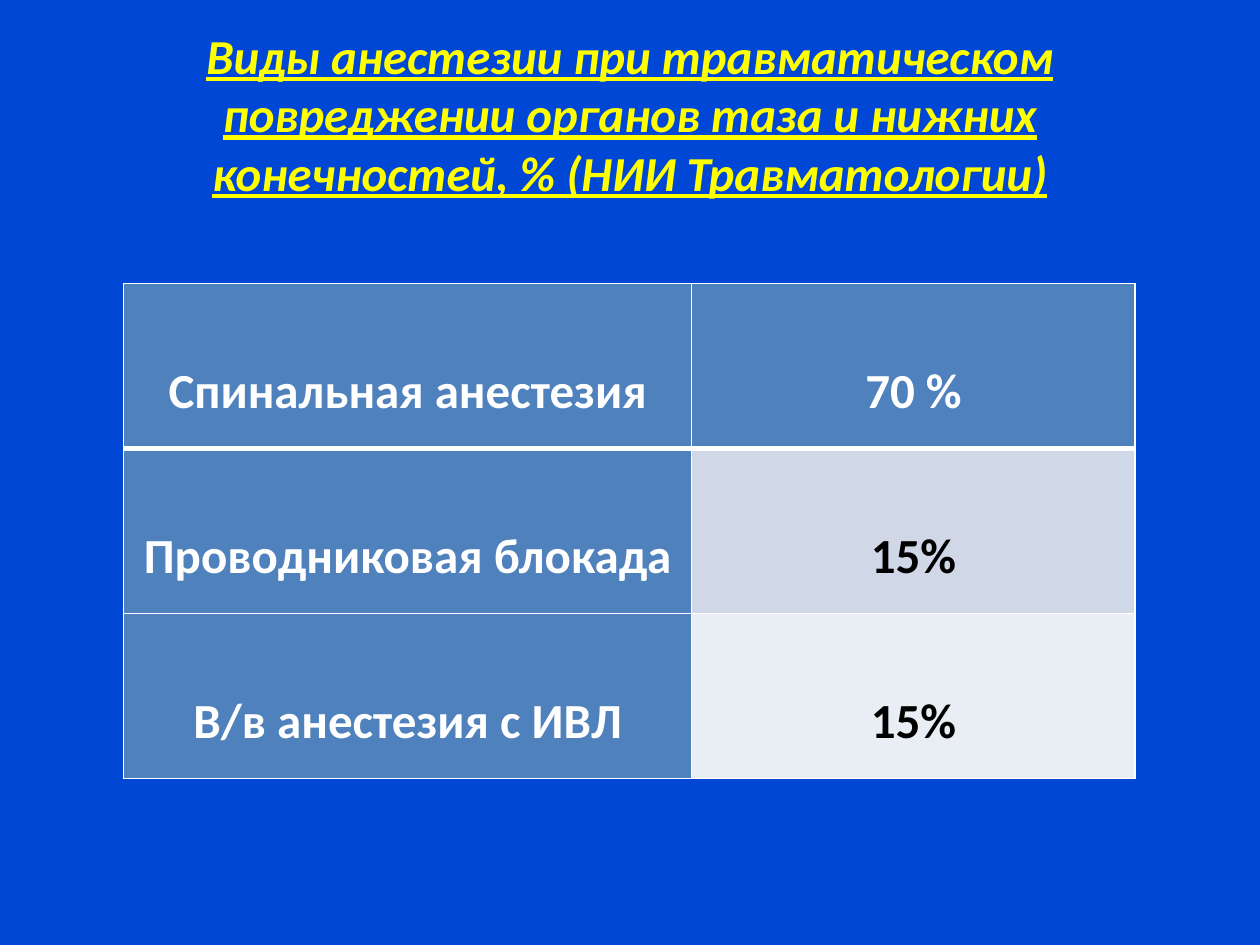
from lxml.etree import SubElement
from pptx import Presentation
from pptx.dml.color import RGBColor
from pptx.enum.text import MSO_ANCHOR, PP_ALIGN
from pptx.oxml.ns import qn
from pptx.util import Inches, Pt

COLORS = {
    "background": "0047D6", "title": "FFFF00", "header": "4F81BD",
    "band_dark": "D0D8E8", "band_light": "E9EDF4",
    "white": "FFFFFF", "black": "000000",
}
ROWS = [
    ("Спинальная анестезия", "70 %", "header", "white"),
    ("Проводниковая блокада", "15%", "band_dark", "black"),
    ("В/в анестезия с ИВЛ", "15%", "band_light", "black"),
]
COLUMN_WIDTHS = [4.51, 3.52]
ROW_HEIGHT = 1.31


def rgb(name):
    return RGBColor.from_string(COLORS[name])


def add_border(cell, side, width):
    line = SubElement(cell._tc.get_or_add_tcPr(), qn(f"a:ln{side}"), w=str(Pt(width)))
    fill = SubElement(line, qn("a:solidFill"))
    SubElement(fill, qn("a:srgbClr"), val=COLORS["white"])


presentation = Presentation()
presentation.slide_width, presentation.slide_height = Inches(10), Inches(7.5)
slide = presentation.slides.add_slide(presentation.slide_layouts[5])
slide.background.fill.solid()
slide.background.fill.fore_color.rgb = rgb("background")

title = slide.shapes.title
title.left, title.top = Inches(0.5), Inches(0.2)
title.width, title.height = Inches(9), Inches(1.87)
frame = title.text_frame
frame.text = ("Виды анестезии при травматическом повреджении органов таза "
              "и нижних конечностей, % (НИИ Травматологии)")
frame.word_wrap = True
frame.vertical_anchor = MSO_ANCHOR.TOP
frame.margin_top = 0
paragraph = frame.paragraphs[0]
paragraph.alignment = PP_ALIGN.CENTER
font = paragraph.font
font.name, font.size = "Calibri", Pt(27.9)
font.bold = font.italic = font.underline = True
font.color.rgb = rgb("title")

table = slide.shapes.add_table(
    len(ROWS), len(COLUMN_WIDTHS), Inches(0.98), Inches(2.25),
    Inches(sum(COLUMN_WIDTHS)), Inches(ROW_HEIGHT * len(ROWS))).table
table.first_col = True
for column, width in zip(table.columns, COLUMN_WIDTHS):
    column.width = Inches(width)

for row_index, (method, share, share_fill, share_color) in enumerate(ROWS):
    table.rows[row_index].height = Inches(ROW_HEIGHT)
    contents = [(method, "header", "white"), (share, share_fill, share_color)]
    for column_index, (text, fill, color) in enumerate(contents):
        cell = table.cell(row_index, column_index)
        cell.text = text
        cell.margin_left = cell.margin_right = Inches(0.07)
        cell.margin_top, cell.margin_bottom = Inches(0.55), 0
        paragraph = cell.text_frame.paragraphs[0]
        paragraph.alignment = PP_ALIGN.CENTER
        paragraph.line_spacing = 1.15
        font = paragraph.font
        font.name, font.size, font.bold = "Calibri", Pt(28), True
        font.color.rgb = rgb(color)
        add_border(cell, "L", 1)
        add_border(cell, "R", 1)
        add_border(cell, "T", 3 if row_index == 1 else 1)
        add_border(cell, "B", 3 if row_index == 0 else 1)
        cell.fill.solid()
        cell.fill.fore_color.rgb = rgb(fill)

presentation.save("out.pptx")
